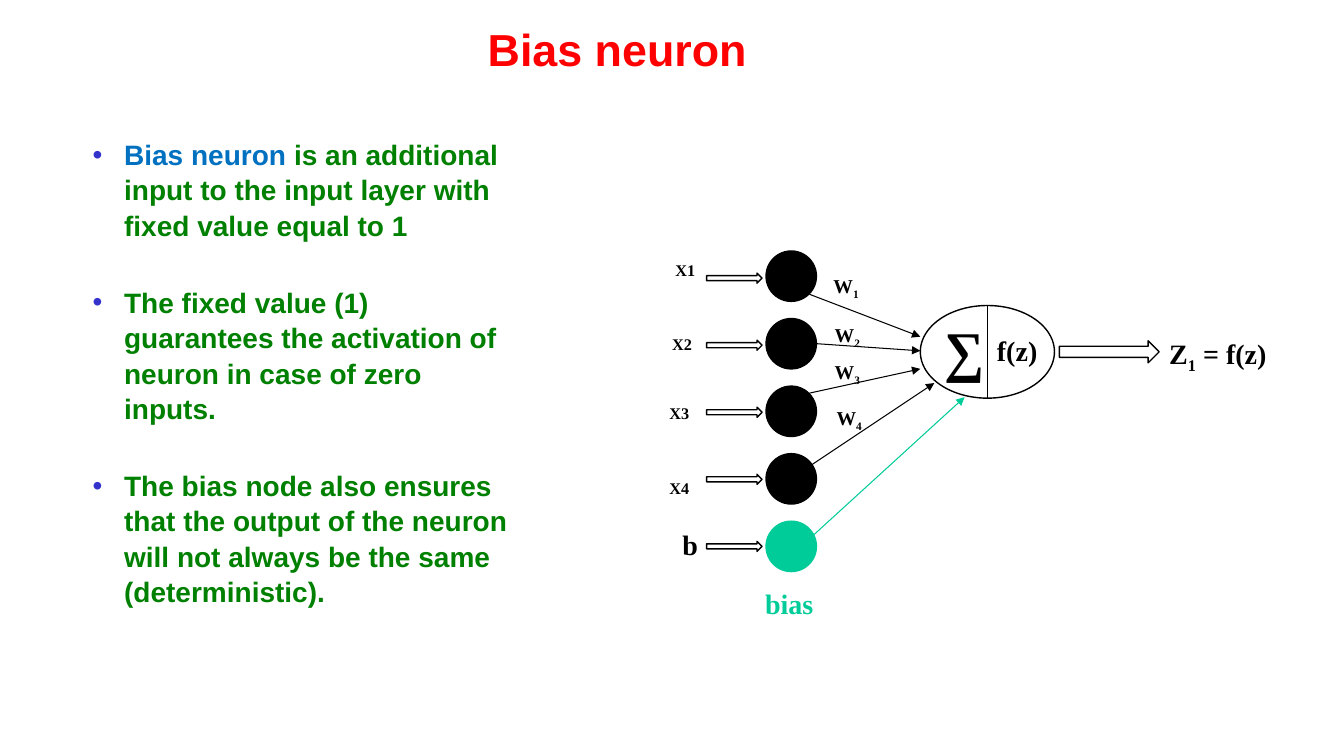
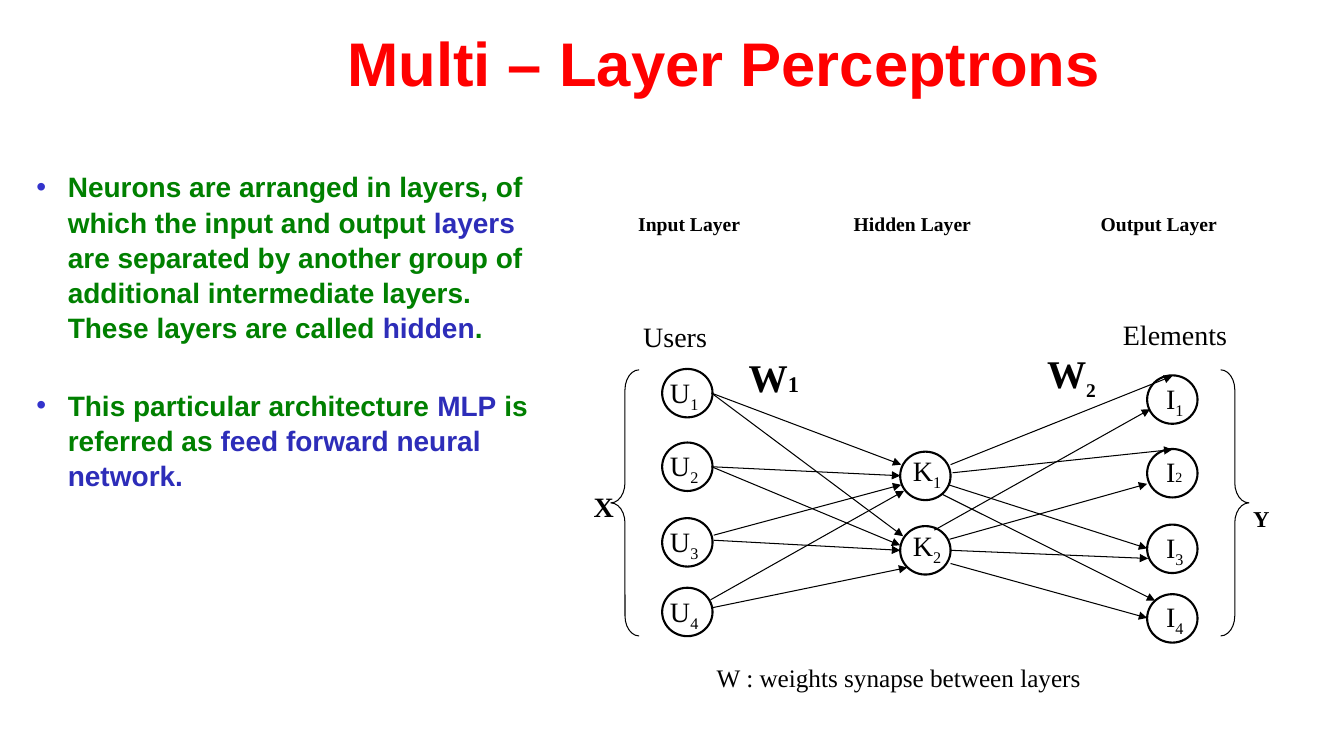
from lxml import etree
from pptx import Presentation
from pptx.dml.color import RGBColor
from pptx.enum.shapes import MSO_CONNECTOR as CONNECTOR, MSO_SHAPE as SHAPE
from pptx.enum.text import MSO_ANCHOR as ANCHOR, PP_ALIGN as ALIGN
from pptx.oxml.ns import qn
from pptx.util import Pt

# Shared style
COLORS = {
    "black": "000000",
    "title": "FF0000",
    "body": "008000",
    "bullet": "3333CC",
    "term": "0070C0",
    "keyword": "2D2DB9",
    "bias": "00CC99",
}
SANS, SERIF = "Arial", "Times New Roman"
INSET = 3.6
BULLET_INDENT = 22.5


def rgb(name):
    return RGBColor.from_string(COLORS[name])


# Text
def add_text_frame(slide, left, top, width, height):
    shape = slide.shapes.add_textbox(Pt(left), Pt(top), Pt(width), Pt(height))
    text_frame = shape.text_frame
    text_frame.word_wrap = True
    text_frame.margin_left = text_frame.margin_right = Pt(INSET)
    text_frame.margin_top = text_frame.margin_bottom = Pt(INSET)
    return text_frame


def style_run(run, font, size, color, bold):
    run.font.name = font
    run.font.size = Pt(size)
    run.font.bold = bold
    run.font.color.rgb = rgb(color)


def add_title(slide, text, left, width, height, size):
    text_frame = add_text_frame(slide, left, 0, width, height)
    text_frame.vertical_anchor = ANCHOR.BOTTOM
    text_frame.text = text
    paragraph = text_frame.paragraphs[0]
    paragraph.alignment = ALIGN.CENTER
    style_run(paragraph.runs[0], SANS, size, "title", True)


def add_bullet(paragraph):
    properties = paragraph._p.get_or_add_pPr()
    properties.set("marL", str(Pt(BULLET_INDENT)))
    properties.set("indent", str(-Pt(BULLET_INDENT)))
    color = etree.SubElement(properties, qn("a:buClr"))
    etree.SubElement(color, qn("a:srgbClr")).set("val", COLORS["bullet"])
    etree.SubElement(properties, qn("a:buFont")).set("typeface", SANS)
    etree.SubElement(properties, qn("a:buChar")).set("char", "•")


def add_bullets(slide, left, top, width, height, items):
    """Each item is a list of (text, color name) pairs."""
    text_frame = add_text_frame(slide, left, top, width, height)
    for index, item in enumerate(items):
        paragraph = text_frame.add_paragraph() if index else text_frame.paragraphs[0]
        add_bullet(paragraph)
        paragraph.line_spacing = 1.05
        if index:
            paragraph.space_before = Pt(30)
        for text, color in item:
            run = paragraph.add_run()
            run.text = text
            style_run(run, SANS, 20, color, True)


def add_label(slide, text, left, top, width, size=20, bold=True, color="black",
              sub_size=None, lowered=True):
    """Text between underscores is a subscript."""
    paragraph = add_text_frame(slide, left, top, width, size * 1.2 + 2 * INSET).paragraphs[0]
    for index, part in enumerate(text.split("_")):
        if not part:
            continue
        is_sub = index % 2 == 1
        run = paragraph.add_run()
        run.text = part
        style_run(run, SERIF, sub_size if is_sub and sub_size else size, color, bold)
        if is_sub and lowered:
            run._r.get_or_add_rPr().set("baseline", "-25000")


# Shapes and lines
def add_outline(slide, kind, left, top, width, height, weight=1, fill=None, line="black"):
    shape = slide.shapes.add_shape(kind, Pt(left), Pt(top), Pt(width), Pt(height))
    shape.shadow.inherit = False
    if fill:
        shape.fill.solid()
        shape.fill.fore_color.rgb = rgb(fill)
    else:
        shape.fill.background()
    shape.line.color.rgb = rgb(line)
    shape.line.width = Pt(weight)
    return shape


def add_line(slide, start_x, start_y, end_x, end_y, color="black", arrow=True):
    connector = slide.shapes.add_connector(
        CONNECTOR.STRAIGHT, Pt(start_x), Pt(start_y), Pt(end_x), Pt(end_y))
    connector.line.color.rgb = rgb(color)
    connector.line.width = Pt(0.75)
    if arrow:
        outline = connector.line._get_or_add_ln()
        etree.SubElement(outline, qn("a:tailEnd")).set("type", "triangle")
    etree.SubElement(connector._element.spPr, qn("a:effectLst"))


def add_brace(slide, kind, left):
    brace = add_outline(slide, kind, left, 264.2, 20.2, 190.1, 0.75)
    brace.adjustments[0] = 0.71
    brace.adjustments[1] = 0.5


def add_node(slide, text, left, top, label_dx, label_dy, **label_style):
    add_outline(slide, SHAPE.OVAL, left, top, 36, 34.6, 1.5)
    add_label(slide, text, left + label_dx, top + label_dy, 36, bold=False, **label_style)


# Slides
def build_bias_slide(slide):
    add_title(slide, "Bias neuron", 125.3, 631.4, 57.6, 32)
    add_bullets(slide, 62.6, 93.6, 309.6, 373, [
        [("Bias neuron ", "term"),
         ("is an additional input to the input layer with fixed value equal to 1", "body")],
        [("The fixed value (1) guarantees the activation of neuron in case of zero inputs.",
          "body")],
        [("The bias node also ensures that the output of the neuron will not always be "
          "the same (deterministic).", "body")],
    ])

    # Input neurons with their arrows
    for row, color in enumerate(["black"] * 4 + ["bias"]):
        add_outline(slide, SHAPE.OVAL, 547.2, 179.3 + 48.25 * row, 36, 36,
                    fill=color, line=color)
        add_outline(slide, SHAPE.RIGHT_ARROW, 504.7, 195.1 + 47.9 * row, 39.6, 7.2)
    for text, left, top in [("_X1_", 478.8, 169.2), ("_Χ2_", 476.6, 221.8),
                            ("_X3_", 474.5, 271.4), ("_X4_", 474.5, 324.7),
                            ("b", 483.8, 373)]:
        add_label(slide, text, left, top, 28)
    add_label(slide, "bias", 542.9, 415.4, 167, color="bias")

    # Weighted links
    for link in [(578.2, 210.2, 657.4, 240.5), (583.2, 245.5, 657.4, 250.6),
                 (578.2, 280.8, 657.4, 263.5), (578.9, 332.6, 667.4, 273.6)]:
        add_line(slide, *link)
    add_line(slide, 581, 382.3, 689, 283.7, color="bias")
    for text, left, top in [("W_1_", 591.8, 192.2), ("W_2_", 592.6, 226.8),
                            ("W_3_", 592.6, 253.4), ("W_4_", 594, 286.6)]:
        add_label(slide, text, left, top, 28.8, size=14)

    # Summing neuron and its result
    add_outline(slide, SHAPE.OVAL, 657.4, 218.2, 95.8, 66.2)
    add_line(slide, 705.6, 218.2, 705.6, 284.2, arrow=False)
    add_label(slide, "∑", 671, 221.8, 34.6, size=40)
    add_label(slide, "f(z)", 708.5, 234.7, 41.8)
    add_outline(slide, SHAPE.RIGHT_ARROW, 756.7, 243.4, 71.3, 15.8)
    add_label(slide, "Z_1_ = f(z)", 831.6, 236.9, 100)


def build_perceptron_slide(slide):
    add_title(slide, "Multi – Layer Perceptrons", 175, 684.7, 74.2, 44)
    add_bullets(slide, 22.3, 116.6, 373.7, 342, [
        [("Neurons are arranged in layers, of which the input and output ", "body"),
         ("layers", "keyword"),
         (" are separated by another group of additional intermediate layers. "
          "These layers are called ", "body"),
         ("hidden", "keyword"), (".", "body")],
        [("This particular architecture ", "body"), ("MLP", "keyword"),
         (" is referred as ", "body"), ("feed forward neural network.", "keyword")],
    ])

    # Layer headings
    for text, left in [("Input Layer", 452.2), ("Hidden Layer", 606.2),
                       ("Output Layer", 782.6)]:
        add_label(slide, text, left, 147.6, 115, size=14)
    add_label(slide, "Users", 455.8, 224.6, 90, bold=False)
    add_label(slide, "Elements", 798.5, 223.2, 84.2, bold=False)

    # Neurons
    for number, top in enumerate([263.5, 316.1, 370.1, 419.8], start=1):
        add_node(slide, f"U_{number}_", 473, top, 2, 1)
        small = {"sub_size": 10, "lowered": False} if number == 2 else {}
        letter = "Ι" if number == 1 else "I"
        add_node(slide, f"{letter}_{number}_", 819.4, top + 4.6, 10, 0.5, **small)
    for number, top in enumerate([322.6, 375.8], start=1):
        add_node(slide, f"Κ_{number}_", 643, top, 5.5, -2)

    # Links from the input to the hidden layer, then on to the output layer
    for link in [(508.3, 280.8, 643.7, 331.9), (508.3, 280.8, 645.1, 383),
                 (508.3, 333.4, 643, 339.8), (508.3, 333.4, 643, 389.5),
                 (509.8, 385.9, 643, 393.1), (509.8, 382.3, 643.7, 346.3),
                 (507.6, 428.4, 645.8, 350.6), (508.3, 434.2, 648, 405.4),
                 (679, 331.9, 837.4, 268.6), (680.4, 337.7, 837.4, 321.1),
                 (672.5, 352.8, 825.1, 429.1), (677.5, 346.3, 819.4, 391.7),
                 (679, 393.1, 820.1, 398.9), (667.4, 378.7, 821.5, 292.3),
                 (678.2, 385.2, 819.4, 345.6), (679, 402.5, 819.4, 441.4)]:
        add_line(slide, *link)

    # Input and output vectors
    add_brace(slide, SHAPE.LEFT_BRACE, 436.3)
    add_label(slide, "X", 420.5, 346.3, 24)
    add_brace(slide, SHAPE.RIGHT_BRACE, 871.9)
    add_label(slide, "_Y_", 891.4, 338.4, 24, size=28)

    # Weights
    add_label(slide, "W_1_", 531.2, 249.1, 74, size=28, sub_size=16, lowered=False)
    add_label(slide, "W_2_", 744.3, 246.2, 50, size=28, sub_size=24)
    add_label(slide, "W : weights synapse between layers", 508.3, 469.4, 327.6,
              size=18, bold=False)


def main():
    presentation = Presentation()
    presentation.slide_width, presentation.slide_height = Pt(960), Pt(540)
    blank_layout = presentation.slide_layouts[6]
    for build in (build_bias_slide, build_perceptron_slide):
        build(presentation.slides.add_slide(blank_layout))
    presentation.save("out.pptx")


if __name__ == "__main__":
    main()
